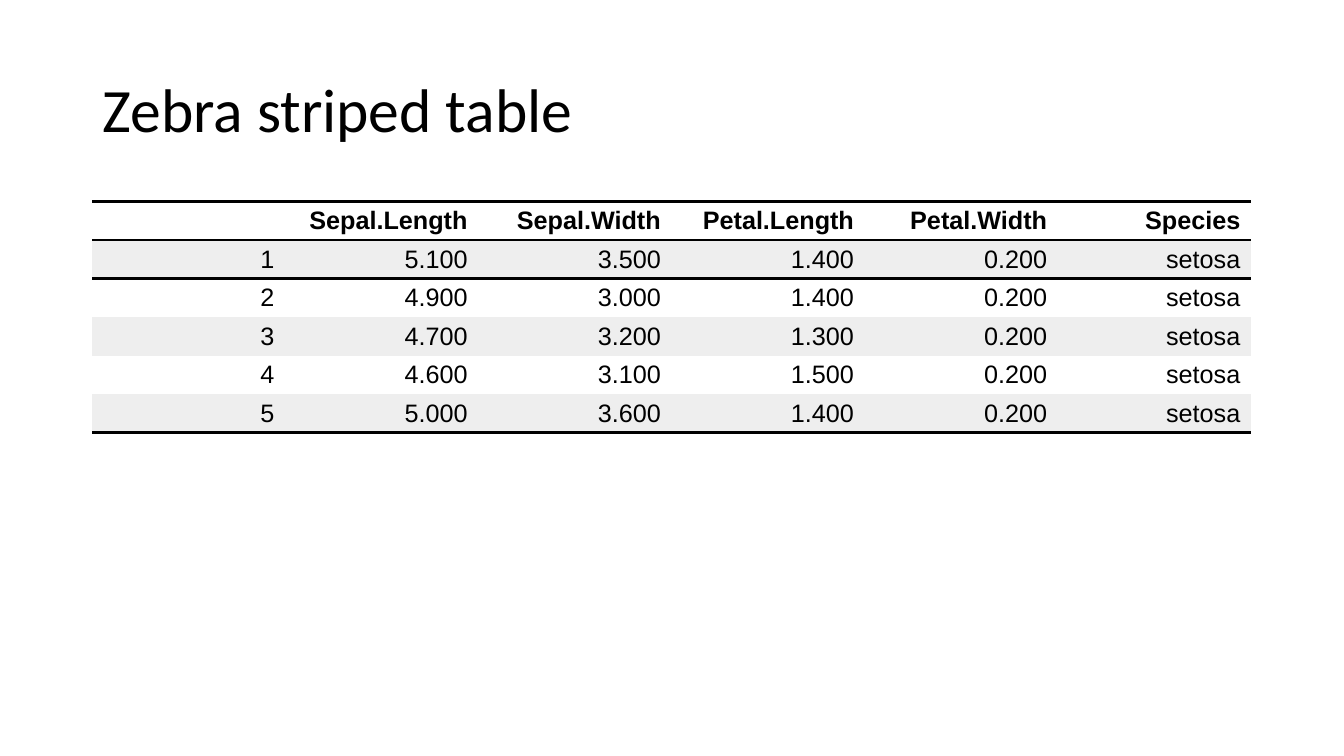
from dataclasses import dataclass

from lxml.etree import SubElement
from pptx import Presentation
from pptx.dml.color import RGBColor
from pptx.enum.text import MSO_ANCHOR as Anchor, MSO_AUTO_SIZE as AutoSize, PP_ALIGN as Align
from pptx.oxml.ns import qn
from pptx.slide import Slide
from pptx.table import _Cell as Cell
from pptx.text.text import _Paragraph as Paragraph
from pptx.util import Emu, Pt

EMU_PER_PX = 6350
PLAIN_STYLE = "{2D5ABB26-0587-4C30-8999-92F81FD0307C}"


def px(length: int) -> Emu:
    return Emu(length * EMU_PER_PX)


@dataclass(frozen=True)
class Theme:
    ink: str = "000000"
    paper: str = "FFFFFF"
    stripe: str = "EEEEEE"
    title_font: str = "Calibri"
    table_font: str = "Arial"
    title_size: int = 44
    table_size: int = 18
    rule_width: int = 2


@dataclass(frozen=True)
class Flower:
    sepal_length: str
    sepal_width: str
    petal_length: str
    petal_width: str
    species: str = "setosa"


THEME = Theme()
LEFT, WIDTH = 132, 1656
TITLE_TOP, TITLE_HEIGHT = 57, 209
TABLE_TOP, ROW_HEIGHT = 288, 55
CELL_PAD_X, CELL_PAD_Y = 14, 3

HEADINGS = ["", "Sepal.Length", "Sepal.Width", "Petal.Length", "Petal.Width", "Species"]
FLOWERS = [
    Flower("5.100", "3.500", "1.400", "0.200"),
    Flower("4.900", "3.000", "1.400", "0.200"),
    Flower("4.700", "3.200", "1.300", "0.200"),
    Flower("4.600", "3.100", "1.500", "0.200"),
    Flower("5.000", "3.600", "1.400", "0.200"),
]


def add_text(paragraph: Paragraph, text: str, font: str, size: int, bold: bool = False) -> None:
    run = paragraph.add_run()
    run.text = text
    run.font.name = font
    run.font.size = Pt(size)
    run.font.bold = bold
    run.font.color.rgb = RGBColor.from_string(THEME.ink)


def add_title(slide: Slide, text: str) -> None:
    title = slide.shapes.title
    title.left, title.top = px(LEFT), px(TITLE_TOP)
    title.width, title.height = px(WIDTH), px(TITLE_HEIGHT)
    frame = title.text_frame
    frame.word_wrap = True
    frame.auto_size = AutoSize.NONE
    frame.vertical_anchor = Anchor.MIDDLE
    heading = frame.paragraphs[0]
    heading.alignment = Align.LEFT
    heading.line_spacing = 0.9
    add_text(heading, text, THEME.title_font, THEME.title_size)


def add_rule(cell: Cell, side: str) -> None:
    rule = SubElement(cell._tc.get_or_add_tcPr(), qn(f"a:{side}"), w=str(Pt(THEME.rule_width)))
    ink = SubElement(rule, qn("a:solidFill"))
    SubElement(ink, qn("a:srgbClr"), val=THEME.ink)


def fill_cell(cell: Cell, text: str, colour: str, sides: list[str], bold: bool) -> None:
    for side in sides:
        add_rule(cell, side)
    cell.fill.solid()
    cell.fill.fore_color.rgb = RGBColor.from_string(colour)
    cell.vertical_anchor = Anchor.MIDDLE
    cell.margin_left = cell.margin_right = px(CELL_PAD_X)
    cell.margin_top = cell.margin_bottom = px(CELL_PAD_Y)
    if not text:
        return
    entry = cell.text_frame.paragraphs[0]
    entry.alignment = Align.RIGHT
    entry.space_before = entry.space_after = Pt(1)
    indents = entry._p.get_or_add_pPr()
    indents.set("marL", str(Pt(1)))
    indents.set("marR", str(Pt(1)))
    add_text(entry, text, THEME.table_font, THEME.table_size, bold)


def add_flower_table(slide: Slide, flowers: list[Flower]) -> None:
    rows = [HEADINGS] + [
        [str(number), flower.sepal_length, flower.sepal_width,
         flower.petal_length, flower.petal_width, flower.species]
        for number, flower in enumerate(flowers, 1)
    ]
    table = slide.shapes.add_table(
        len(rows), len(HEADINGS), px(LEFT), px(TABLE_TOP), px(WIDTH), px(ROW_HEIGHT * len(rows))
    ).table
    table.horz_banding = False
    table._tbl.tblPr.find(qn("a:tableStyleId")).text = PLAIN_STYLE
    for column in table.columns:
        column.width = px(WIDTH // len(HEADINGS))
    for index, values in enumerate(rows):
        table.rows[index].height = px(ROW_HEIGHT)
        colour = THEME.stripe if index % 2 else THEME.paper
        sides = ["lnT"] if index <= 1 else []
        if index in (0, len(rows) - 1):
            sides.append("lnB")
        for position, text in enumerate(values):
            fill_cell(table.cell(index, position), text, colour, sides, bold=index == 0)


def main() -> None:
    deck = Presentation()
    deck.slide_width, deck.slide_height = px(1920), px(1080)
    slide = deck.slides.add_slide(deck.slide_layouts.get_by_name("Title Only"))
    add_title(slide, "Zebra striped table")
    add_flower_table(slide, FLOWERS)
    deck.save("out.pptx")


if __name__ == "__main__":
    main()
